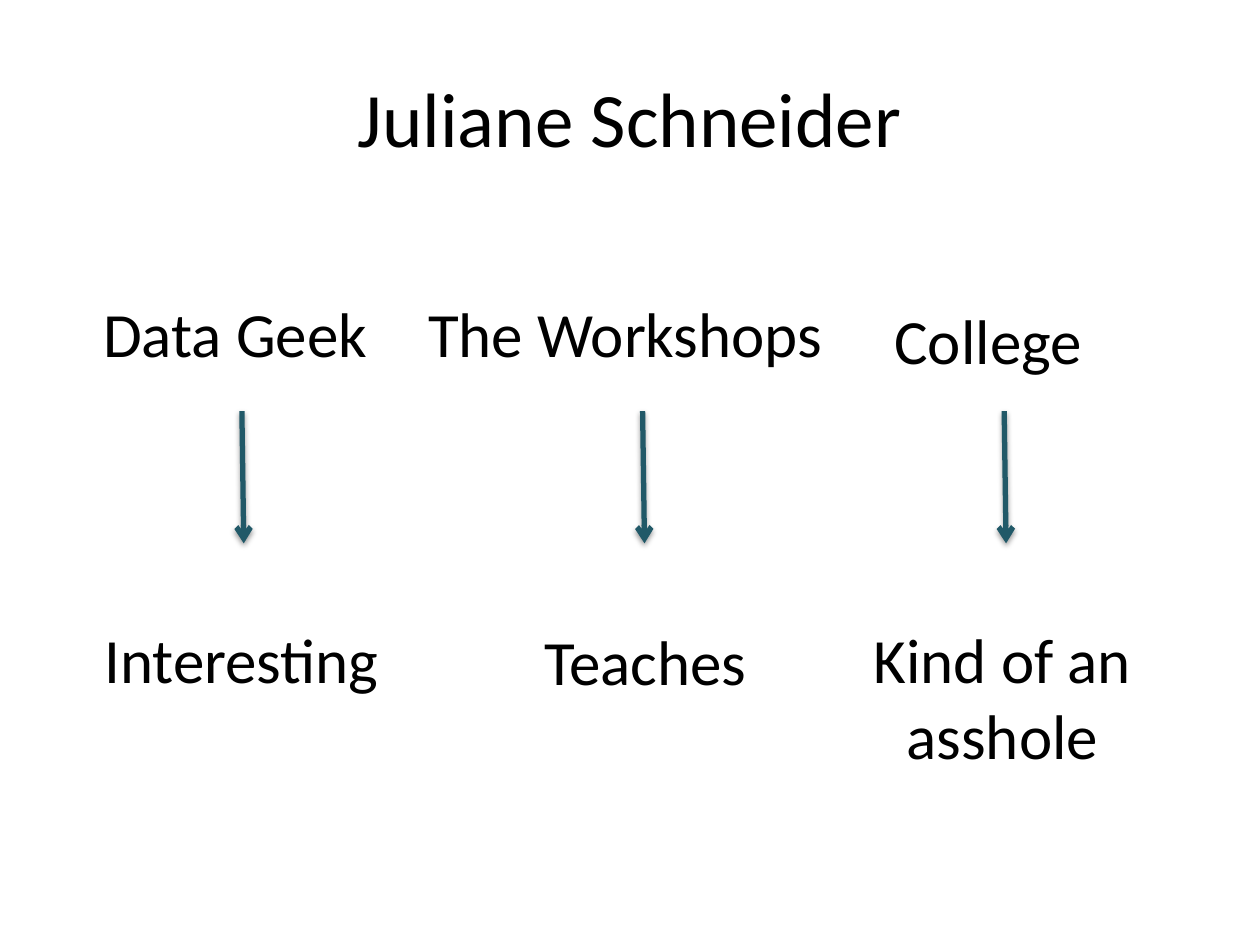
import pptx
import pptx.dml.color
import pptx.enum.shapes
import pptx.enum.text
import pptx.oxml
import pptx.oxml.ns
import pptx.util

WIDTH, HEIGHT = pptx.util.Inches(10), pptx.util.Inches(7.5)
TITLE_ONLY = 5
ARROW_TOP, ARROW_BOTTOM = 0.435, 0.575
LABEL_HEIGHT = 0.095

# Per column: arrow x, then (text, left, top, width) above and below it.
# All lengths are shares of the slide's width or height.
COLUMNS = [
    (0.192, ("Data Geek", 0.072, 0.305, 0.233), ("Interesting", 0.073, 0.65, 0.243)),
    (0.51, ("The Workshops", 0.33, 0.305, 0.346), ("Teaches", 0.422, 0.652, 0.187)),
    (0.797, ("College", 0.7, 0.312, 0.185), ("Kind of an asshole", 0.682, 0.65, 0.227)),
]
WRAPPED = "Kind of an asshole"


def color(hex_string):
    return pptx.dml.color.RGBColor.from_string(hex_string)


def across(share):
    return round(WIDTH * share)


def down(share):
    return round(HEIGHT * share)


class Page:
    font = "Calibri"
    ink = "000000"
    arrow_color = "215968"
    title_size = 44
    label_size = 36

    def __init__(self, deck):
        self.slide = deck.slides.add_slide(deck.slide_layouts[TITLE_ONLY])

    def format_text(self, frame, size):
        for para in frame.paragraphs:
            for span in para.runs:
                span.font.name = self.font
                span.font.size = pptx.util.Pt(size)
                span.font.color.rgb = color(self.ink)

    def title(self, text, left, top, width, height):
        box = self.slide.shapes.title
        box.left, box.top = across(left), down(top)
        box.width, box.height = across(width), down(height)
        frame = box.text_frame
        frame.text = text
        frame.vertical_anchor = pptx.enum.text.MSO_ANCHOR.MIDDLE
        frame.paragraphs[0].alignment = pptx.enum.text.PP_ALIGN.CENTER
        self.format_text(frame, self.title_size)

    def label(self, text, left, top, width, lines=1):
        """Add a label; one of several lines is wrapped and centred."""
        box = self.slide.shapes.add_textbox(
            across(left), down(top), across(width), down(LABEL_HEIGHT + 0.08 * (lines - 1)))
        frame = box.text_frame
        frame.text = text
        frame.word_wrap = lines > 1
        frame.auto_size = pptx.enum.text.MSO_AUTO_SIZE.SHAPE_TO_FIT_TEXT
        if lines > 1:
            frame.paragraphs[0].alignment = pptx.enum.text.PP_ALIGN.CENTER
        self.format_text(frame, self.label_size)

    def down_arrow(self, x):
        """Add a slightly slanted arrow with a soft shadow below it."""
        arrow = self.slide.shapes.add_connector(
            pptx.enum.shapes.MSO_CONNECTOR.STRAIGHT,
            across(x), down(ARROW_TOP), across(x + 0.0015), down(ARROW_BOTTOM))
        arrow.line.color.rgb = color(self.arrow_color)
        arrow.line.width = pptx.util.Pt(3)
        namespace = pptx.oxml.ns.nsdecls("a")
        arrow.line._get_or_add_ln().append(
            pptx.oxml.parse_xml(f'<a:tailEnd {namespace} type="arrow"/>'))
        blur, distance = pptx.util.Pt(3.1), pptx.util.Pt(1.6)
        arrow._element.spPr.append(pptx.oxml.parse_xml(
            f'<a:effectLst {namespace}>'
            f'<a:outerShdw blurRad="{blur}" dist="{distance}" dir="5400000" rotWithShape="0">'
            '<a:srgbClr val="000000"><a:alpha val="38000"/></a:srgbClr>'
            '</a:outerShdw></a:effectLst>'))


def main():
    deck = pptx.Presentation()
    deck.slide_width, deck.slide_height = WIDTH, HEIGHT
    page = Page(deck)
    page.title("Juliane Schneider", 0.05, 0.04, 0.9, 0.167)
    for arrow_x, trait, meaning in COLUMNS:
        page.label(*trait)
        page.down_arrow(arrow_x)
        page.label(*meaning, lines=2 if meaning[0] == WRAPPED else 1)
    deck.save("out.pptx")


if __name__ == "__main__":
    main()
